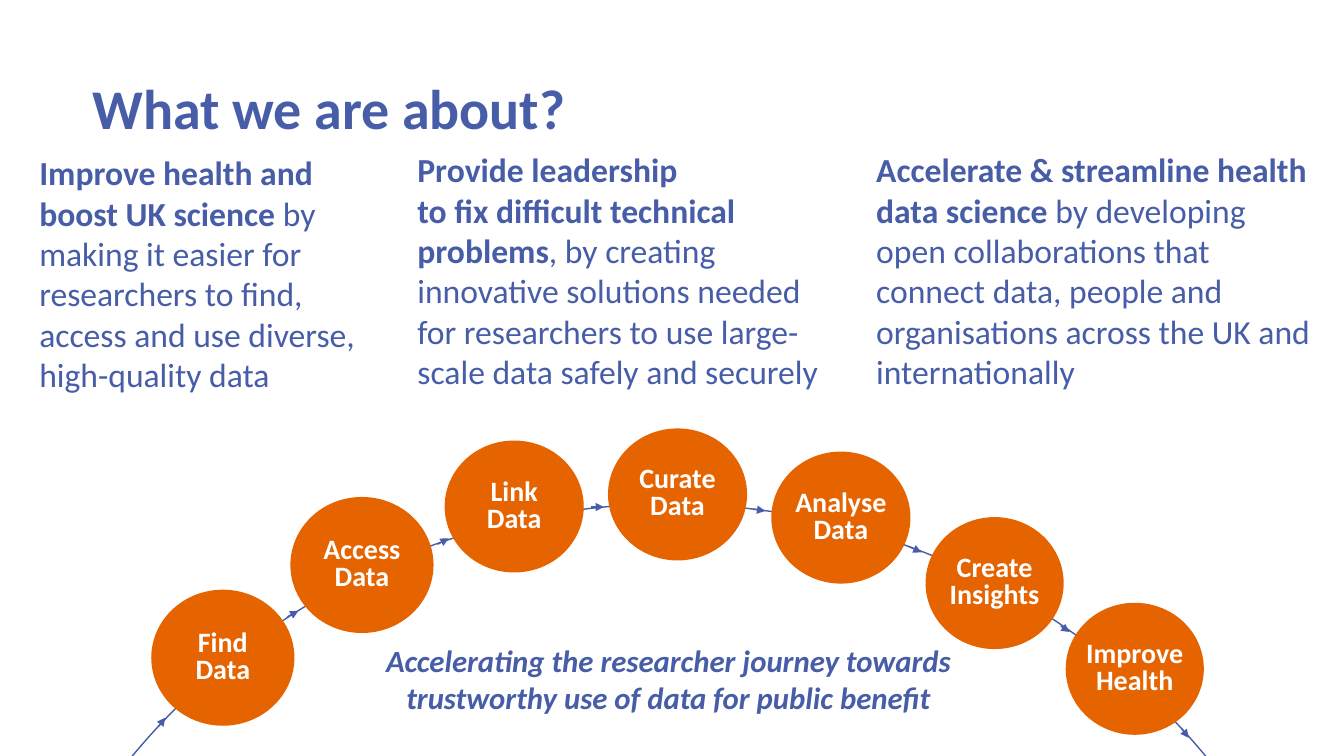
"""Build the slide on what we are about, with the researcher journey as an arc of steps."""
from lxml.etree import SubElement
from pptx import Presentation
from pptx.dml.color import RGBColor
from pptx.enum.shapes import MSO_CONNECTOR, MSO_SHAPE
from pptx.enum.text import MSO_ANCHOR as Anchor, MSO_AUTO_SIZE as AutoSize, PP_ALIGN as Align
from pptx.oxml.ns import qn
from pptx.util import Inches, Pt

HEADING = ("What we are about?", (0.92, 0.73, 9.24, 0.67))
AIMS = [
    ("Improve health and boost UK science",
     " by making it easier for researchers to find, access and use diverse, high-quality data",
     (0.39, 1.51, 3.54, 2.42)),
    ("Provide leadership \vto fix difficult technical problems",
     ", by creating innovative solutions needed for researchers to use large-scale data safely and securely",
     (4.14, 1.48, 4.2, 2.42)),
    ("Accelerate & streamline health data science",
     " by developing open collaborations that connect data, people and organisations"
     " across the UK and internationally",
     (8.69, 1.48, 4.35, 2.42)),
]
TAGLINE = ("Accelerating the researcher journey towards trustworthy use of data for public benefit",
           (3.35, 6.32, 6.56, 0.84))
JOURNEY_RING = (-0.28, 5, 13.83, 13.83)
STEPS = [
    ("Find Data", (1.5, 5.85, 1.42, 1.35)),
    ("Access Data", (2.88, 4.93, 1.42, 1.35)),
    ("Link\vData", (4.41, 4.37, 1.38, 1.31)),
    ("Curate Data", (6.03, 4.25, 1.38, 1.31)),
    ("Analyse Data", (7.65, 4.48, 1.38, 1.31)),
    ("Create Insights", (9.18, 5.13, 1.37, 1.31)),
    ("Improve\nHealth", (10.57, 5.98, 1.37, 1.31)),
]
ARROWS = [
    (1.57, 7.21, 1.64, 7.12), (2.85, 6.12, 2.96, 6.06),
    (4.34, 5.4, 4.45, 5.34), (5.86, 5.03, 5.99, 5.03),
    (7.47, 5.05, 7.59, 5.07), (9.01, 5.42, 9.14, 5.48),
    (10.52, 6.21, 10.61, 6.27), (11.72, 7.23, 11.79, 7.32),
]
THEME = {
    "font": "Calibri",
    "blue": RGBColor.from_string("475DA7"),
    "orange": RGBColor.from_string("E66400"),
    "white": RGBColor.from_string("FFFFFF"),
    "heading": Pt(40), "aim": Pt(24), "tagline": Pt(22), "step": Pt(20), "line": Pt(1),
}
NO_MARGINS = dict.fromkeys(("margin_left", "margin_top", "margin_right", "margin_bottom"), 0)


def assign(target, formats):
    """Set every attribute named in formats on target."""
    for attribute, value in formats.items():
        setattr(target, attribute, value)


def inches(box):
    """Turn a tuple of numbers into lengths."""
    return [Inches(number) for number in box]


def style_runs(frame, size, color, **extra):
    """Give every run in the frame one type style."""
    for paragraph in frame.paragraphs:
        for run in paragraph.runs:
            assign(run.font, {"name": THEME["font"], "size": THEME[size], "bold": True, **extra})
            run.font.color.rgb = THEME[color]


def add_heading(slide):
    """Place and style the title."""
    wording, box = HEADING
    title = slide.shapes.title
    assign(title, dict(zip(("left", "top", "width", "height"), inches(box))))
    frame = title.text_frame
    frame.text = wording
    assign(frame, {**NO_MARGINS, "vertical_anchor": Anchor.BOTTOM, "auto_size": AutoSize.NONE})
    frame.paragraphs[0].alignment = Align.LEFT
    style_runs(frame, "heading", "blue")


def add_text(slide, wording, box):
    """Add a wrapping text box and return its frame."""
    frame = slide.shapes.add_textbox(*inches(box)).text_frame
    frame.text = wording
    assign(frame, {"word_wrap": True, "auto_size": AutoSize.SHAPE_TO_FIT_TEXT})
    return frame


def add_aim(slide, lead, detail, box):
    """Add one aim with a bold lead and a plain detail."""
    frame = add_text(slide, lead, box)
    assign(frame, NO_MARGINS)
    detail_run = frame.paragraphs[0].add_run()
    detail_run.text = detail
    style_runs(frame, "aim", "blue")
    detail_run.font.bold = False


def add_tagline(slide):
    """Add the centred line below the arc."""
    frame = add_text(slide, *TAGLINE)
    frame.paragraphs[0].alignment = Align.CENTER
    style_runs(frame, "tagline", "blue", italic=True)


def add_ellipse(slide, box):
    """Add an ellipse without a shadow."""
    ellipse = slide.shapes.add_shape(MSO_SHAPE.OVAL, *inches(box))
    ellipse.shadow.inherit = False
    return ellipse


def add_ring(slide):
    """Add the large outline that carries the journey."""
    ring = add_ellipse(slide, JOURNEY_RING)
    ring.fill.background()
    ring.line.color.rgb = THEME["blue"]
    ring.line.width = THEME["line"]


def add_step(slide, label, box):
    """Add one labelled step of the journey."""
    step = add_ellipse(slide, box)
    step.fill.solid()
    step.fill.fore_color.rgb = THEME["orange"]
    step.line.fill.background()
    frame = step.text_frame
    frame.text = label
    assign(frame, {**NO_MARGINS, "word_wrap": True, "vertical_anchor": Anchor.MIDDLE})
    for paragraph in frame.paragraphs:
        assign(paragraph, {"alignment": Align.CENTER, "line_spacing": 0.8})
    style_runs(frame, "step", "white")


def add_arrow(slide, ends):
    """Add one short arrow between steps."""
    arrow = slide.shapes.add_connector(MSO_CONNECTOR.STRAIGHT, *inches(ends))
    arrow.line.color.rgb = THEME["blue"]
    arrow.line.width = THEME["line"]
    SubElement(arrow.line._get_or_add_ln(), qn("a:tailEnd"), type="triangle")
    SubElement(arrow._element.spPr, qn("a:effectLst"))


def main():
    """Build and save the slide."""
    deck = Presentation()
    assign(deck, {"slide_width": Inches(13.33), "slide_height": Inches(7.5)})
    slide = deck.slides.add_slide(deck.slide_layouts[5])
    add_heading(slide)
    add_ring(slide)
    for aim in AIMS:
        add_aim(slide, *aim)
    add_tagline(slide)
    for step in STEPS:
        add_step(slide, *step)
    for ends in ARROWS:
        add_arrow(slide, ends)
    deck.save("out.pptx")


if __name__ == "__main__":
    main()
